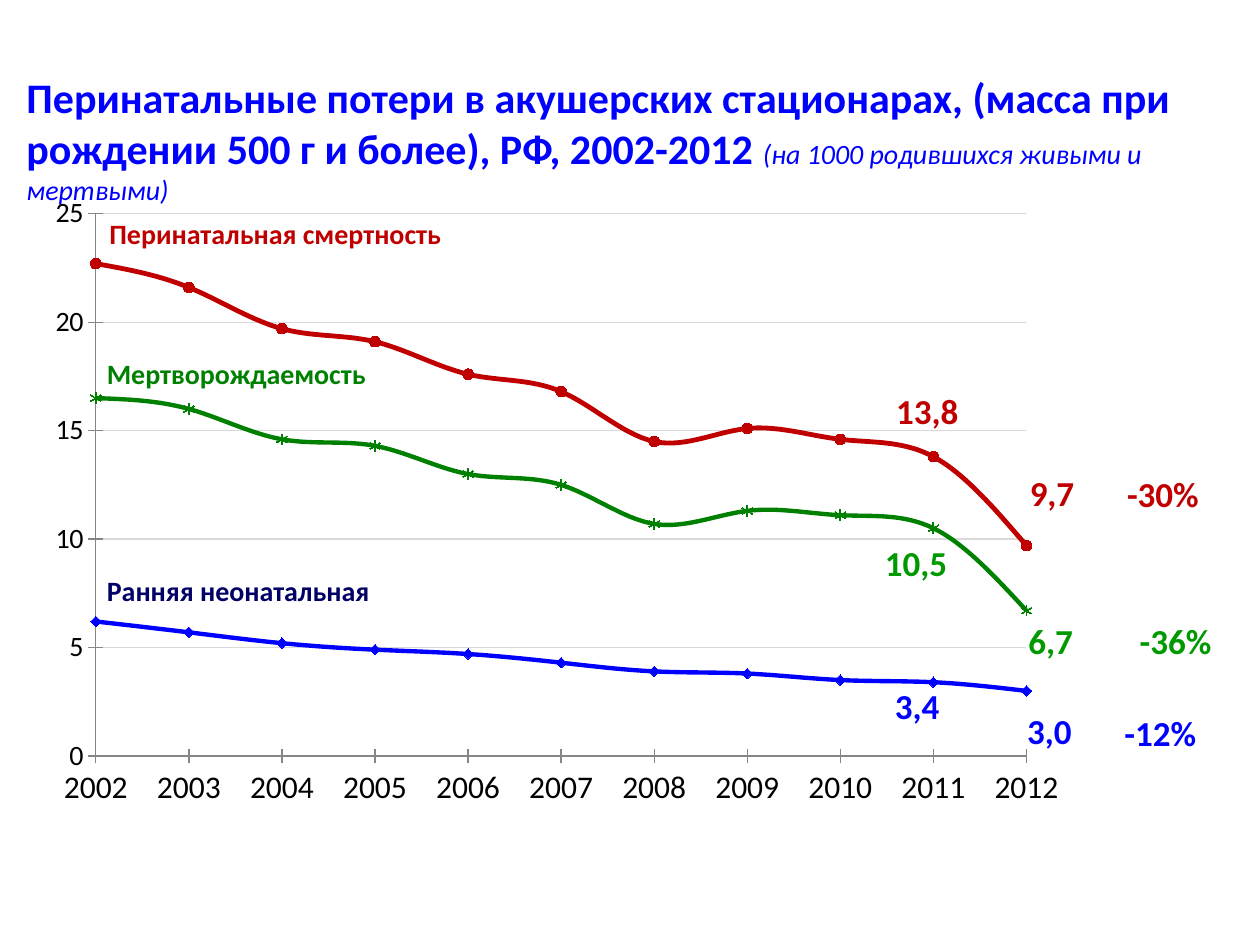
from dataclasses import dataclass

from lxml import etree
from pptx import Presentation
from pptx.chart.data import CategoryChartData
from pptx.dml.color import RGBColor
from pptx.enum.chart import XL_CHART_TYPE as ChartType, XL_MARKER_STYLE as Marker
from pptx.enum.chart import XL_TICK_MARK as TickMark
from pptx.enum.text import MSO_ANCHOR as Anchor, MSO_AUTO_SIZE as AutoSize, PP_ALIGN as Align
from pptx.oxml.ns import qn
from pptx.util import Inches, Pt


@dataclass(frozen=True)
class Theme:
    font: str = "Calibri"
    red: RGBColor = RGBColor(0xC0, 0x00, 0x00)
    green: RGBColor = RGBColor(0x00, 0x80, 0x00)
    light_green: RGBColor = RGBColor(0x00, 0x99, 0x00)
    blue: RGBColor = RGBColor(0x00, 0x00, 0xFF)
    navy: RGBColor = RGBColor(0x00, 0x00, 0x66)
    black: RGBColor = RGBColor(0x00, 0x00, 0x00)
    axis: RGBColor = RGBColor(0x86, 0x86, 0x86)
    grid: RGBColor = RGBColor(0xD9, 0xD9, 0xD9)
    title_size: Pt = Pt(24)
    name_size: Pt = Pt(16)
    value_size: Pt = Pt(20)
    category_size: Pt = Pt(18)


theme = Theme()


def set_font(font, size, color, bold=False):
    font.name = theme.font
    font.size = size
    font.color.rgb = color
    font.bold = bold


def add_label(page, text, left, top, width, height, size, color, align):
    box = page.shapes.add_textbox(Inches(left), Inches(top), Inches(width), Inches(height))
    frame = box.text_frame
    frame.word_wrap = True
    frame.auto_size = AutoSize.SHAPE_TO_FIT_TEXT
    para = frame.paragraphs[0]
    para.text = text
    para.alignment = align
    set_font(para.font, size, color, bold=True)


deck = Presentation()
deck.slide_width, deck.slide_height = Inches(10), Inches(7.5)
page = deck.slides.add_slide(deck.slide_layouts[5])

# Title with the unit in small italics
title = page.shapes.title
title.left, title.top = Inches(0.11), Inches(0.52)
title.width, title.height = Inches(9.68), Inches(0.81)
title.text_frame.word_wrap = True
title.text_frame.auto_size = AutoSize.NONE
title.text_frame.vertical_anchor = Anchor.TOP
para = title.text_frame.paragraphs[0]
para.alignment = Align.LEFT
set_font(para.font, theme.title_size, theme.blue, bold=True)
span = para.add_run()
span.text = ("Перинатальные потери в акушерских стационарах, "
             "(масса при рождении 500 г и более), РФ, 2002-2012 ")
unit = para.add_run()
unit.text = "(на 1000 родившихся живыми и мертвыми)"
unit.font.size = theme.name_size
unit.font.bold = False
unit.font.italic = True

# Line chart: name, values, colour, line width, marker
series_rows = [
    ("Перинатальная смертность",
     (22.7, 21.6, 19.7, 19.1, 17.6, 16.8, 14.5, 15.1, 14.6, 13.8, 9.7),
     theme.red, 2.75, Marker.CIRCLE),
    ("Мертворождаемость",
     (16.5, 16, 14.6, 14.3, 13, 12.5, 10.7, 11.3, 11.1, 10.5, 6.7),
     theme.green, 2.5, Marker.STAR),
    ("Ранняя неонатальная",
     (6.2, 5.7, 5.2, 4.9, 4.7, 4.3, 3.9, 3.8, 3.5, 3.4, 3),
     theme.blue, 2.5, Marker.DIAMOND),
]
data = CategoryChartData()
data.categories = [str(year) for year in range(2002, 2013)]
for name, values, *_ in series_rows:
    data.add_series(name, values)
chart = page.shapes.add_chart(ChartType.LINE_MARKERS, Inches(0.28), Inches(1.47),
                              Inches(8.29), Inches(5.04), data).chart
chart.has_legend = False
chart.has_title = False
chart.font.name = "Arial"
chart.font.size = Pt(11)
chart.font.color.rgb = theme.black

for series, (_, _, color, width, marker) in zip(chart.plots[0].series, series_rows):
    series.smooth = True
    series.format.line.color.rgb = color
    series.format.line.width = Pt(width)
    series.marker.style = marker
    series.marker.size = 6
    series.marker.format.line.color.rgb = color
    if marker == Marker.STAR:
        series.marker.format.fill.background()
    else:
        series.marker.format.fill.solid()
        series.marker.format.fill.fore_color.rgb = color

# Axes
years, rates = chart.category_axis, chart.value_axis
for axis, size in ((years, theme.category_size), (rates, theme.name_size)):
    axis.major_tick_mark = TickMark.CROSS
    axis.format.line.color.rgb = theme.axis
    set_font(axis.tick_labels.font, size, theme.black)
rates.minimum_scale, rates.maximum_scale, rates.major_unit = 0, 25, 5
rates.major_gridlines.format.line.color.rgb = theme.grid
rates.major_gridlines.format.line.width = Pt(0.75)

# The lines start on the value axis, and the plot area has a fixed place
plot_area = chart.plots[0]._element.getparent()
cross_between = etree.Element(qn("c:crossBetween"), val="midCat")
plot_area.find(qn("c:valAx")).find(qn("c:crosses")).addnext(cross_between)
layout = plot_area.find(qn("c:layout"))
if layout is None:
    layout = etree.Element(qn("c:layout"))
    plot_area.insert(0, layout)
manual = etree.SubElement(layout, qn("c:manualLayout"))
for tag, value in (("layoutTarget", "inner"), ("xMode", "edge"), ("yMode", "edge"),
                   ("x", "0.058"), ("y", "0.045"), ("w", "0.891"), ("h", "0.854")):
    etree.SubElement(manual, qn(f"c:{tag}")).set("val", value)

# Names of the lines
for text, left, top, width, color in (
    ("Мертворождаемость", 0.75, 2.78, 3.54, theme.green),
    ("Ранняя неонатальная", 0.75, 4.5, 2.91, theme.navy),
    ("Перинатальная смертность", 0.77, 1.67, 5.08, theme.red),
):
    add_label(page, text, left, top, width, 0.37, theme.name_size, color, Align.LEFT)

# Values for 2011 and 2012, and the change between them
for color, labels in (
    (theme.red, (("-30%", 8.7, 3.7), ("9,7", 7.82, 3.69), ("13,8", 6.83, 3.04))),
    (theme.light_green, (("-36%", 8.8, 4.87), ("6,7", 7.81, 4.87), ("10,5", 6.74, 4.25))),
    (theme.blue, (("-12%", 8.68, 5.6), ("3,4", 6.75, 5.38), ("3,0", 7.8, 5.58))),
):
    for text, left, top in labels:
        add_label(page, text, left, top, 1.06, 0.44, theme.value_size, color, Align.CENTER)

deck.save("out.pptx")
